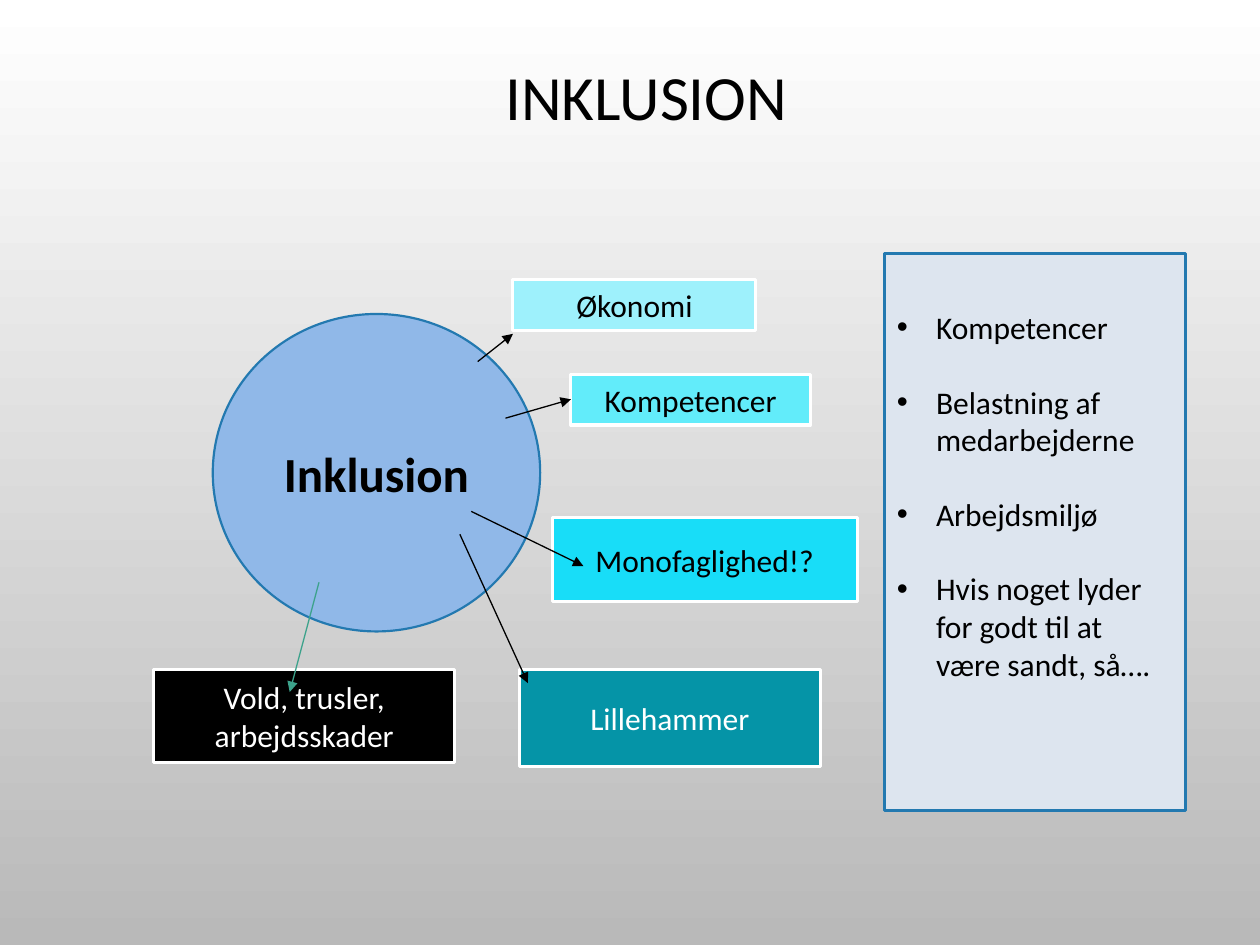
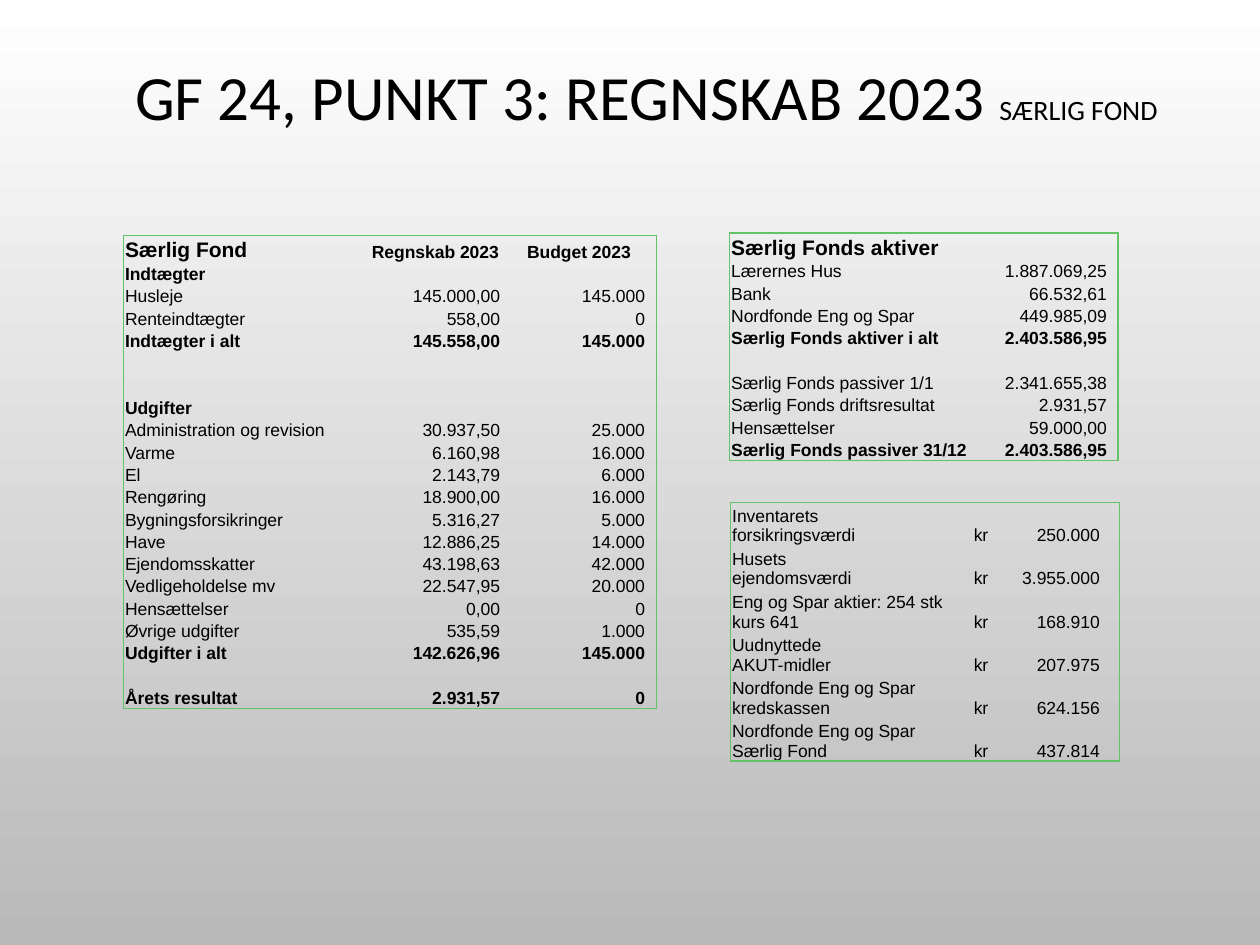
from lxml import etree
from pptx import Presentation
from pptx.dml.color import RGBColor
from pptx.enum.shapes import MSO_CONNECTOR, MSO_SHAPE
from pptx.enum.text import MSO_ANCHOR, PP_ALIGN
from pptx.oxml.ns import qn
from pptx.util import Cm, Pt

STRAIGHT = MSO_CONNECTOR.STRAIGHT
OVAL, RECTANGLE = MSO_SHAPE.OVAL, MSO_SHAPE.RECTANGLE
TOP, MIDDLE, BOTTOM = MSO_ANCHOR.TOP, MSO_ANCHOR.MIDDLE, MSO_ANCHOR.BOTTOM
LEFT, CENTER, RIGHT = PP_ALIGN.LEFT, PP_ALIGN.CENTER, PP_ALIGN.RIGHT

COLORS = {
    "black": "000000", "white": "FFFFFF", "page_end": "B9B9B9",
    "circle": "90B8E8", "blue_line": "2379B0", "panel": "DDE5EF",
    "cyan_pale": "9EF1FC", "cyan_light": "62ECFA", "cyan": "18DDF8",
    "teal": "0594A7", "green_arrow": "3CA28B", "table_line": "66C266",
}
BODY_FONT, TABLE_FONT = "Calibri", "Arial"
PLAIN_TABLE_STYLE = "{2D5ABB26-0587-4C30-8999-92F81FD0307C}"

CAUSES = [
    ("Økonomi", "cyan_pale", "black", (7.24, 0, 4.9, 1.02),
     (6.53, 1.65, 7.24, 1.09), "black"),
    ("Kompetencer", "cyan_light", "black", (8.41, 1.91, 4.83, 1.02),
     (7.09, 2.79, 8.41, 2.41), "black"),
    ("Monofaglighed!?", "cyan", "black", (8.03, 4.8, 6.15, 1.68),
     (6.4, 4.67, 8.66, 5.77), "black"),
    ("Lillehammer", "teal", "white", (7.37, 7.85, 6.07, 1.96),
     (6.17, 5.13, 7.54, 8.13), "black"),
    ("Vold, trusler, arbejdsskader", "black", "white", (0, 7.85, 6.07, 1.88),
     (3.33, 6.1, 2.74, 8.31), "green_arrow"),
]
CONCERNS = [
    "Kompetencer", "Belastning af medarbejderne", "Arbejdsmiljø",
    "Hvis noget lyder for godt til at være sandt, så….",
]
BOLD_LABELS = {
    "Særlig Fond", "Indtægter", "Indtægter i alt", "Udgifter", "Udgifter i alt",
    "Årets resultat", "Særlig Fonds aktiver", "Særlig Fonds aktiver i alt",
    "Særlig Fonds passiver 31/12",
}
ACCOUNTS = [
    ("Særlig Fond", "Regnskab 2023", "Budget 2023"),
    ("Indtægter",),
    ("Husleje", "145.000,00", "145.000"),
    ("Renteindtægter", "558,00", "0"),
    ("Indtægter i alt", "145.558,00", "145.000"),
    ("",),
    ("",),
    ("Udgifter",),
    ("Administration og revision", "30.937,50", "25.000"),
    ("Varme", "6.160,98", "16.000"),
    ("El", "2.143,79", "6.000"),
    ("Rengøring", "18.900,00", "16.000"),
    ("Bygningsforsikringer", "5.316,27", "5.000"),
    ("Have", "12.886,25", "14.000"),
    ("Ejendomsskatter", "43.198,63", "42.000"),
    ("Vedligeholdelse mv", "22.547,95", "20.000"),
    ("Hensættelser", "0,00", "0"),
    ("Øvrige udgifter", "535,59", "1.000"),
    ("Udgifter i alt", "142.626,96", "145.000"),
    ("",),
    ("Årets resultat", "2.931,57", "0"),
]
BALANCE = [
    ("Særlig Fonds aktiver",),
    ("Lærernes Hus", "1.887.069,25"),
    ("Bank", "66.532,61"),
    ("Nordfonde Eng og Spar", "449.985,09"),
    ("Særlig Fonds aktiver i alt", "2.403.586,95"),
    ("",),
    ("Særlig Fonds passiver 1/1", "2.341.655,38"),
    ("Særlig Fonds driftsresultat", "2.931,57"),
    ("Hensættelser", "59.000,00"),
    ("Særlig Fonds passiver 31/12", "2.403.586,95"),
]
HOLDINGS = [
    ("Inventarets forsikringsværdi", "kr\t250.000"),
    ("Husets ejendomsværdi", "kr\t3.955.000"),
    ("Eng og Spar aktier: 254 stk kurs 641", "kr\t168.910"),
    ("Uudnyttede AKUT-midler", "kr\t207.975"),
    ("Nordfonde Eng og Spar kredskassen", "kr\t624.156"),
    ("Nordfonde Eng og Spar Særlig Fond", "kr\t437.814"),
]


def rgb(name):
    """Return the named colour."""
    return RGBColor.from_string(COLORS[name])


def add_span(para, text, size, color="black", bold=False, font=BODY_FONT):
    """Add one formatted run to a paragraph."""
    span = para.add_run()
    span.text = text
    span.font.name, span.font.size, span.font.bold = font, Pt(size), bold
    span.font.color.rgb = rgb(color)


def add_page(deck, *title_spans):
    """Add a page with the shared gradient and a centred title."""
    page = deck.slides.add_slide(deck.slide_layouts[6])
    fill = page.background.fill
    fill.gradient()
    fill.gradient_angle = 270
    for stop, position, color in zip(fill.gradient_stops, (0, 1), ("white", "page_end")):
        stop.position = position
        stop.color.rgb = rgb(color)
    box = page.shapes.add_textbox(Cm(1.7), Cm(0.64), Cm(22.66), Cm(2.74))
    frame = box.text_frame
    frame.word_wrap, frame.vertical_anchor = True, MIDDLE
    para = frame.paragraphs[0]
    para.alignment, para.line_spacing = CENTER, 0.9
    for text, size in title_spans:
        add_span(para, text, size)
    return page


def add_box(page, kind, place, fill, line, line_width):
    """Add a filled and outlined shape and return its text frame."""
    box = page.shapes.add_shape(kind, *map(Cm, place))
    box.shadow.inherit = False
    box.fill.solid()
    box.fill.fore_color.rgb = rgb(fill)
    box.line.color.rgb = rgb(line)
    box.line.width = Pt(line_width)
    box.text_frame.word_wrap = True
    box.text_frame.vertical_anchor = MIDDLE
    return box.text_frame


def add_label(frame, text, size, color, bold=False):
    """Write one centred line into a shape."""
    para = frame.paragraphs[0]
    para.alignment = CENTER
    add_span(para, text, size, color, bold)


def add_arrow(page, ends, color):
    """Add a thin arrow between two points."""
    arrow = page.shapes.add_connector(STRAIGHT, *map(Cm, ends))
    arrow.line.color.rgb = rgb(color)
    arrow.line.width = Pt(0.75)
    etree.SubElement(arrow.line._get_or_add_ln(), qn("a:tailEnd"), type="triangle")
    etree.SubElement(arrow._element.spPr, qn("a:effectLst"))


def add_diagram(page, left, top):
    """Draw the circle with its arrows and surrounding boxes."""
    circle = add_box(page, OVAL, (left + 1.19, top + 0.69, 6.6, 6.4),
                     "circle", "blue_line", 1.25)
    add_label(circle, "Inklusion", 28, "black", True)
    for text, fill, color, (x, y, width, height), ends, arrow_color in CAUSES:
        frame = add_box(page, RECTANGLE, (left + x, top + y, width, height),
                        fill, "white", 1.75)
        add_label(frame, text, 18, color)
        x1, y1, x2, y2 = ends
        add_arrow(page, (left + x1, top + y1, left + x2, top + y2), arrow_color)


def add_concerns(page, left, top, width, height):
    """Draw the panel with the bulleted concerns."""
    frame = add_box(page, RECTANGLE, (left, top, width, height), "panel", "blue_line", 1.25)
    frame.vertical_anchor, frame.margin_top = TOP, Cm(1.1)
    for index, text in enumerate(CONCERNS):
        para = frame.add_paragraph() if index else frame.paragraphs[0]
        para.alignment = LEFT
        if index:
            para.space_before = Pt(21)
        properties = para._p.get_or_add_pPr()
        properties.set("marL", str(Cm(0.79)))
        properties.set("indent", str(-Cm(0.79)))
        etree.SubElement(properties, qn("a:buFont"), typeface="Arial")
        etree.SubElement(properties, qn("a:buChar"), char="•")
        add_span(para, text, 18)


def set_borders(cell, sides):
    """Draw the given sides of a cell and hide the others."""
    properties = cell._tc.get_or_add_tcPr()
    for index, side in enumerate("LRTB"):
        line = etree.Element(qn(f"a:ln{side}"), w=str(Pt(1)))
        if side in sides:
            fill = etree.SubElement(line, qn("a:solidFill"))
            etree.SubElement(fill, qn("a:srgbClr"), val=COLORS["table_line"])
        else:
            etree.SubElement(line, qn("a:noFill"))
        properties.insert(index, line)


def fill_cell(cell, text, size, bold, align, is_label):
    """Write one cell with tight margins, using a right tab for sums in kroner."""
    cell.fill.background()
    cell.vertical_anchor = BOTTOM
    cell.margin_left = Cm(0.03)
    cell.margin_right = Cm(0.03 if is_label else 0.23)
    cell.margin_top, cell.margin_bottom = Cm(0.02), 0
    para = cell.text_frame.paragraphs[0]
    para.alignment = align
    if "\t" in text:
        cell.margin_left = Cm(0.13)
        tabs = etree.SubElement(para._p.get_or_add_pPr(), qn("a:tabLst"))
        etree.SubElement(tabs, qn("a:tab"), pos=str(Cm(2.54)), algn="r")
    if text:
        add_span(para, text, size, bold=bold, font=TABLE_FONT)
    else:
        etree.SubElement(para._p, qn("a:endParaRPr"), sz=str(size * 100))


def add_ledger(page, left, top, widths, heights, records, merged=()):
    """Draw a framed ledger: labels at the left, values in the last columns."""
    row_count, column_count = len(records), len(widths)
    table = page.shapes.add_table(row_count, column_count, Cm(left), Cm(top),
                                  Cm(sum(widths)), Cm(sum(heights))).table
    table.first_row = table.horz_banding = False
    table._tbl.tblPr.find(qn("a:tableStyleId")).text = PLAIN_TABLE_STYLE
    for column, width in zip(table.columns, widths):
        column.width = Cm(width)
    for row, height in zip(table.rows, heights):
        row.height = Cm(height)
    for r, (label, *values) in enumerate(records):
        texts = [label] + [""] * (column_count - 1 - len(values)) + values
        bold = label in BOLD_LABELS
        for c, text in enumerate(texts):
            cell = table.cell(r, c)
            size = 12 if bold and r == c == 0 else 10
            align = LEFT if c == 0 or "\t" in text else CENTER if r == 0 else RIGHT
            fill_cell(cell, text, size, bold, align, c == 0)
            edges = {"L": c == 0, "R": c == column_count - 1,
                     "T": r == 0, "B": r == row_count - 1}
            set_borders(cell, [side for side, outer in edges.items() if outer])
    for r in merged:
        table.cell(r, 0).merge(table.cell(r, 1))


def build_inclusion(deck):
    """Build the page about inclusion."""
    page = add_page(deck, ("INKLUSION", 36))
    add_diagram(page, 3.1, 5.64)
    add_concerns(page, 17.83, 5.11, 6.07, 11.23)


def build_accounts(deck):
    """Build the page with the accounts of the fund."""
    page = add_page(deck, ("GF 24, PUNKT 3: REGNSKAB 2023 ", 36), ("SÆRLIG FOND", 16))
    add_ledger(page, 2.49, 4.75, (4.32, 0.63, 2.87, 2.92),
               [0.53] + [0.45] * 20, ACCOUNTS)
    add_ledger(page, 14.71, 4.7, (4.5, 0.79, 2.54),
               [0.53] + [0.45] * 9, BALANCE, merged=[9])
    add_ledger(page, 14.73, 10.13, (2.79, 1.55, 0.43, 3.07),
               [0.81] * 6, HOLDINGS, merged=[2, 4, 5])


def main():
    """Build and save the deck."""
    deck = Presentation()
    deck.slide_width, deck.slide_height = Cm(25.4), Cm(19.05)
    build_inclusion(deck)
    build_accounts(deck)
    deck.save("out.pptx")


if __name__ == "__main__":
    main()
